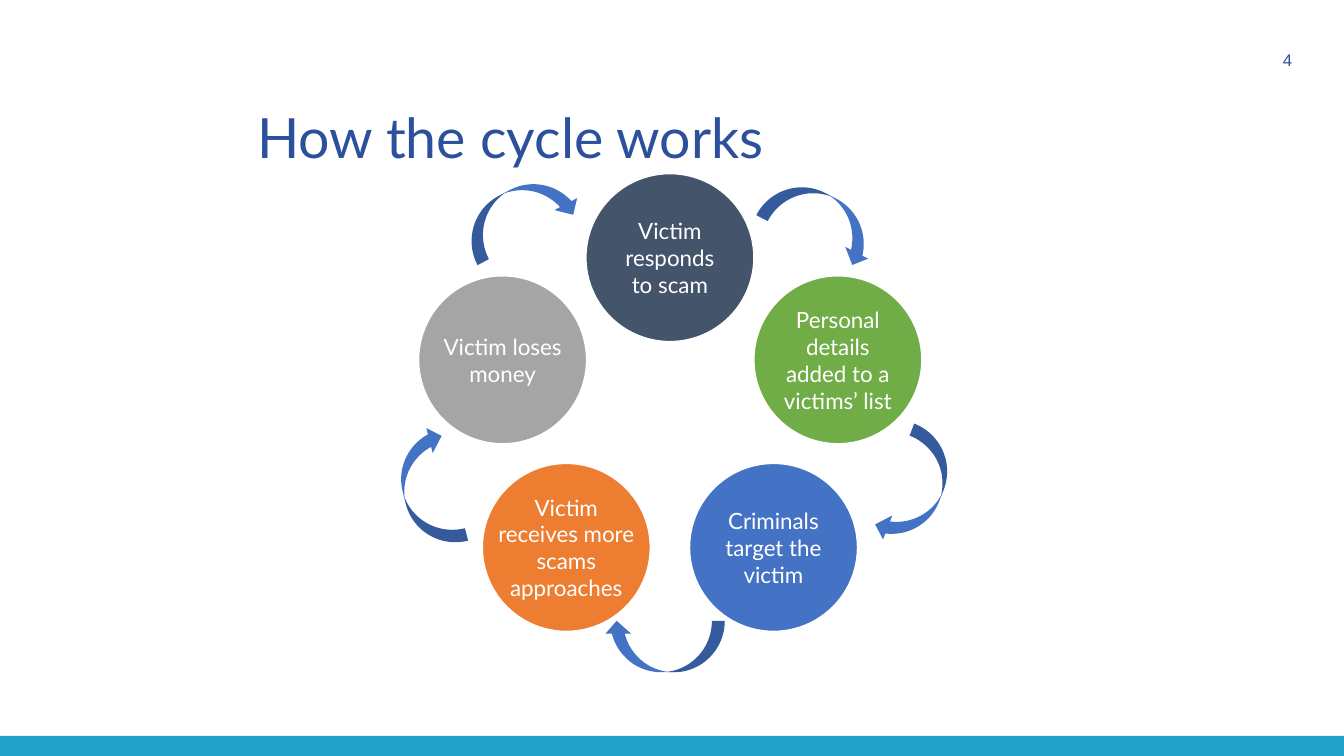
from pptx import Presentation
from pptx.dml import color
from pptx.enum import shapes, text
from pptx.util import Pt

WIDTH, HEIGHT = 960, 540
NAVY, BLUE, WHITE = "2D509C", "4472C4", "FFFFFF"
DIAMETER, LINE_HEIGHT = 121, 19.5
ARROW_WIDTH, ARROW_HEIGHT = 86.4, 36.72

# Each stage: centre x and y, fill, label width, line count, paragraphs
STAGES = [
    (180, 60.5, "44546A", 75, 3, "Victim responds to scam"),
    (300, 133.5, "70AD47", 103, 4, "Personal details\nadded to a victims’ list"),
    (254, 267.5, BLUE, 103, 3, "Criminals target the\nvictim"),
    (106, 267.5, "ED7D31", 100, 4, "Victim receives more scams\napproaches"),
    (60.5, 133.5, "A5A5A5", 90, 2, "Victim loses money"),
]
ARROWS = [
    (288.5, 33.8, 27.4),
    (356, 226, 111.2),
    (176, 338.3, 180),
    (7.5, 225.3, 255.8),
    (72.3, 29.5, 332.2),
]


def rgb(value):
    """Return the colour for a hex string."""
    return color.RGBColor.from_string(value)


def write(frame, words, size, font, ink, align, anchor, inset=0):
    """Put formatted words into a text frame."""
    frame.text = words
    frame.word_wrap = True
    frame.auto_size = text.MSO_AUTO_SIZE.NONE
    frame.vertical_anchor = anchor
    frame.margin_left = frame.margin_right = Pt(inset)
    frame.margin_top = frame.margin_bottom = Pt(inset / 2)
    for paragraph in frame.paragraphs:
        paragraph.alignment = align
        for run in paragraph.runs:
            run.font.size = Pt(size)
            run.font.name = font
            run.font.color.rgb = rgb(ink)


def add_figure(slide, kind, left, top, width, height, fill, outline=None):
    """Add a flat preset shape."""
    figure = slide.shapes.add_shape(kind, Pt(left), Pt(top), Pt(width), Pt(height))
    figure.shadow.inherit = False
    figure.fill.solid()
    figure.fill.fore_color.rgb = rgb(fill)
    if outline:
        figure.line.color.rgb = rgb(outline)
        figure.line.width = Pt(2)
    else:
        figure.line.fill.background()
    return figure


def add_heading(slide, left, top, width, height):
    """Place the slide title."""
    heading = slide.shapes.title
    heading.left, heading.top = Pt(left), Pt(top)
    heading.width, heading.height = Pt(width), Pt(height)
    write(heading.text_frame, "How the cycle works", 39.6, "Lato", NAVY,
          text.PP_ALIGN.LEFT, text.MSO_ANCHOR.MIDDLE, 7.2)
    heading.text_frame.paragraphs[0].line_spacing = 0.9


def add_page_number(slide, left, top, width, height):
    """Place the page number."""
    number = slide.shapes.add_textbox(Pt(left), Pt(top), Pt(width), Pt(height))
    write(number.text_frame, "4", 12, "Arial", NAVY,
          text.PP_ALIGN.RIGHT, text.MSO_ANCHOR.BOTTOM)


def add_cycle(slide, left, top):
    """Draw the stages and the arrows that link them."""
    for x, y, fill, width, lines, words in STAGES:
        add_figure(slide, shapes.MSO_SHAPE.OVAL, left + x - DIAMETER / 2,
                   top + y - DIAMETER / 2, DIAMETER, DIAMETER, fill, WHITE)
        height = lines * LINE_HEIGHT
        label = slide.shapes.add_textbox(
            Pt(left + x - width / 2), Pt(top + y - height / 2), Pt(width), Pt(height))
        write(label.text_frame, words, 16, "Lato", WHITE,
              text.PP_ALIGN.CENTER, text.MSO_ANCHOR.MIDDLE)
    for x, y, angle in ARROWS:
        arrow = add_figure(slide, shapes.MSO_SHAPE.CURVED_DOWN_ARROW,
                           left + x - ARROW_WIDTH / 2, top + y - ARROW_HEIGHT / 2,
                           ARROW_WIDTH, ARROW_HEIGHT, BLUE)
        arrow.rotation = angle


def main():
    """Build and save the slide."""
    deck = Presentation()
    deck.slide_width, deck.slide_height = Pt(WIDTH), Pt(HEIGHT)
    slide = deck.slides.add_slide(deck.slide_layouts[5])
    add_page_number(slide, 888.5, 28, 34.5, 21.6)
    add_heading(slide, 176.4, 85.7, 610, 28.8)
    add_cycle(slide, 298.5, 123.5)
    add_figure(slide, shapes.MSO_SHAPE.RECTANGLE, 0, 525.6, WIDTH, 14.4, "20A2CB")
    deck.save("out.pptx")


if __name__ == "__main__":
    main()
